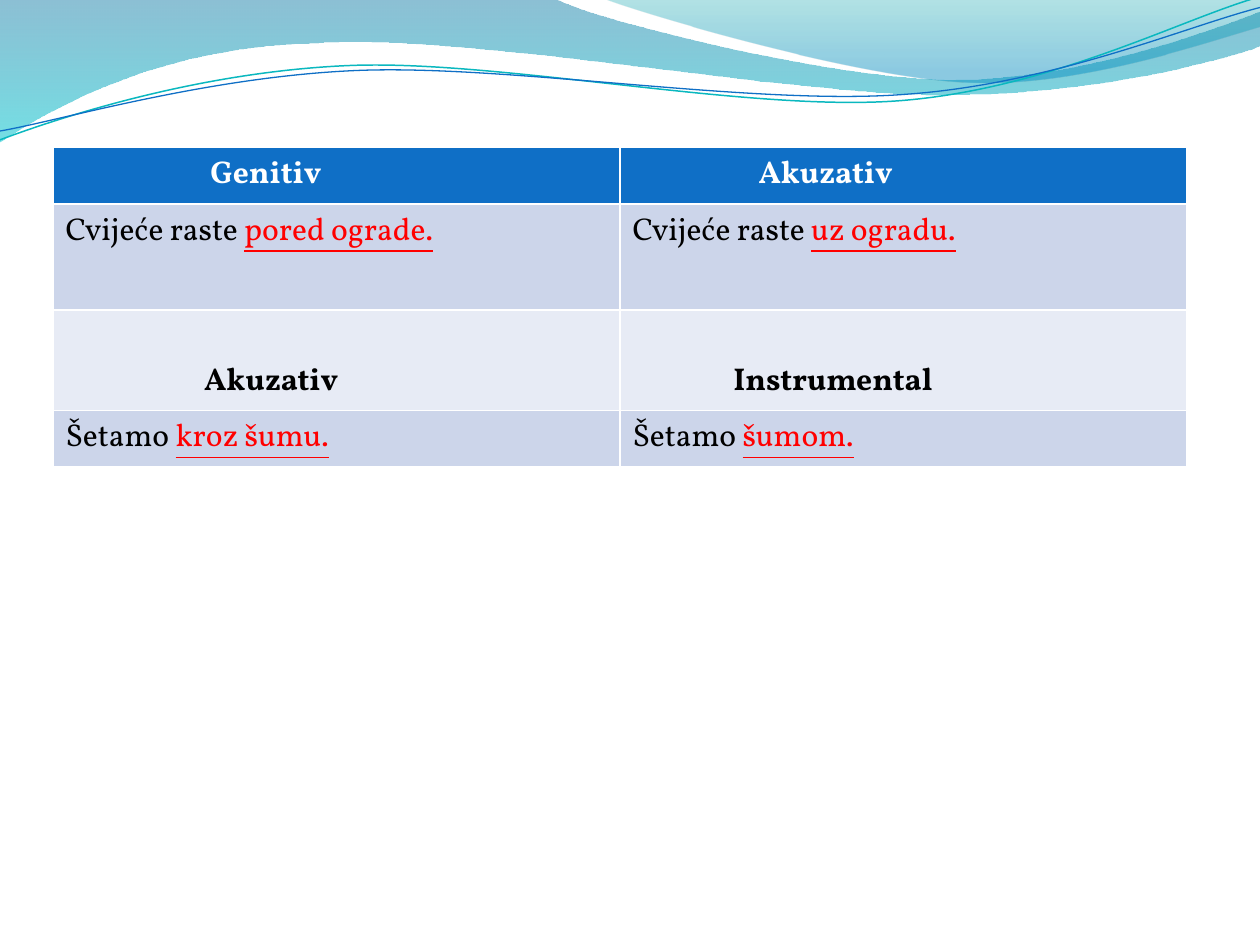
from math import cos, radians, sin

from lxml.etree import SubElement
from pptx import Presentation
from pptx.dml.color import RGBColor
from pptx.enum.text import MSO_ANCHOR
from pptx.oxml.ns import qn
from pptx.util import Inches, Pt

FONT = "Vollkorn"
LINE_TILT = -2.7

# Wave outlines: a start point, then lines (2 numbers) or Bézier curves (6),
# in grid units of one tenth of the slide's width
BACK_WAVE = [(0, 0), (4.4, -.01), (4.76, .17, 6.64, .63, 7.58, .63),
             (8.53, .63, 9.58, .26, 10, .09), (10.01, .36),
             (9.83, .44, 8.7, .76, 7.46, .75), (6.22, .75, 3.82, .28, 2.57, .34),
             (1.29, .36, .46, .83, -.01, 1.13), (0, 0)]
FRONT_WAVE = [(4.79, -.01), (5.09, .11, 6.82, .62, 7.69, .65),
              (8.56, .69, 9.61, .32, 10, .21), (10, 0), (4.79, -.01)]
TEAL_LINE = [(0, 1.11), (.48, .93, 1.58, .57, 2.77, .52),
             (3.95, .47, 5.93, .89, 7.13, .8), (8.33, .71, 9.38, .15, 9.98, -.02)]
BLUE_LINE = [(0, 1.04), (.47, .96, 1.64, .61, 2.83, .56),
             (4.03, .51, 5.97, .84, 7.17, .75), (8.36, .67, 9.41, .21, 10, .06)]

# Table rows: height, fill, text colour, cells.
# A heading cell is (text, indent); a sentence cell is (plain part, marked part).
ROWS = [
    (.41, "0F6FC6", "FFFFFF", [("Genitiv", 1.15), ("Akuzativ", 1)]),
    (.84, "CCD5EA", "000000", [("Cvijeće raste ", "pored ograde."),
                               ("Cvijeće raste ", "uz ogradu.")]),
    (.8, "E7EBF5", "000000", [("Akuzativ", 1.1), ("Instrumental", .8)]),
    (.41, "CCD5EA", "000000", [("Šetamo ", "kroz šumu."), ("Šetamo ", "šumom.")]),
]


def color(hex_string):
    return RGBColor.from_string(hex_string)


def turn(point, center, degrees):
    """Turn a point clockwise about a center."""
    angle = radians(degrees)
    x, y = point[0] - center[0], point[1] - center[1]
    return (center[0] + x * cos(angle) - y * sin(angle),
            center[1] + x * sin(angle) + y * cos(angle))


def add_outline(shapes, left, top, unit, outline, closed, tilt=0, center=(0, 0)):
    """Draw an outline whose box is tilted about its center."""
    points = [turn(segment[i:i + 2], center, -tilt)
              for segment in outline for i in range(0, len(segment), 2)]
    points = [(round(left + x * unit), round(top + y * unit)) for x, y in points]
    builder = shapes.build_freeform(*points[0])
    builder.add_line_segments(points[1:], close=closed)
    shape = builder.convert_to_shape()
    shape.shadow.inherit = False
    shape.rotation = tilt % 360

    # Merge each three corners of a curve into one Bézier segment
    corners = iter(list(shape.element.iter(qn("a:lnTo"))))
    for segment in outline[1:]:
        first = next(corners)
        if len(segment) == 6:
            first.tag = qn("a:cubicBezTo")
            for corner in (next(corners), next(corners)):
                first.append(corner[0])
                corner.getparent().remove(corner)
    return shape


def add_waves(slide, left, top, width):
    unit = width / 10
    # Translucent gradient bands
    for outline, stops in (
            (BACK_WAVE, ((0, "0074A1", 45), (1, "00C6CF", 55))),
            (FRONT_WAVE, ((0, "00A1A9", 30), (.8, "008BBF", 45)))):
        shape = add_outline(slide.shapes, left, top, unit, outline, True)
        shape.line.fill.background()
        shape.fill.gradient()
        shape.fill.gradient_angle = 270
        for stop, (position, hex_string, _) in zip(shape.fill.gradient_stops, stops):
            stop.position = position
            stop.color.rgb = color(hex_string)
        for element, (_, _, opacity) in zip(shape.element.iter(qn("a:srgbClr")), stops):
            SubElement(element, qn("a:alpha"), val=str(opacity * 1000))
    # Thin lines
    group = slide.shapes.add_group_shape()
    for outline, hex_string, weight, center in (
            (TEAL_LINE, "0AB8BF", .85, (4.99, .575)),
            (BLUE_LINE, "0F6FC6", .75, (5, .59))):
        shape = add_outline(group.shapes, left, top, unit, outline, False, LINE_TILT, center)
        shape.fill.background()
        shape.line.color.rgb = color(hex_string)
        shape.line.width = Pt(weight)


def fill_cell(cell, content, text_color):
    text, detail = content
    is_heading = not isinstance(detail, str)
    parts = [(text, text_color)] if is_heading else [(text, text_color), (detail, "FF0000")]
    paragraph = cell.text_frame.paragraphs[0]
    for part, hex_string in parts:
        run = paragraph.add_run()
        run.text = part
        run.font.name = FONT
        run.font.size = Pt(18)
        run.font.bold = is_heading
        run.font.underline = part == detail
        run.font.color.rgb = color(hex_string)
    if is_heading:
        cell.margin_left = Inches(.1 + detail)
        cell.vertical_anchor = MSO_ANCHOR.BOTTOM


def add_case_table(slide, left, top, width):
    height = Inches(sum(row[0] for row in ROWS))
    table = slide.shapes.add_table(len(ROWS), 2, left, top, width, height).table
    for row_index, (row_height, fill, text_color, contents) in enumerate(ROWS):
        table.rows[row_index].height = Inches(row_height)
        for column_index, content in enumerate(contents):
            cell = table.cell(row_index, column_index)
            cell.fill.solid()
            cell.fill.fore_color.rgb = color(fill)
            fill_cell(cell, content, text_color)


def main():
    presentation = Presentation()
    presentation.slide_width, presentation.slide_height = Inches(10), Inches(7.5)
    slide = presentation.slides.add_slide(presentation.slide_layouts[6])
    add_waves(slide, 0, 0, presentation.slide_width)
    add_case_table(slide, Inches(.42), Inches(1.17), Inches(9))
    presentation.save("out.pptx")


if __name__ == "__main__":
    main()
